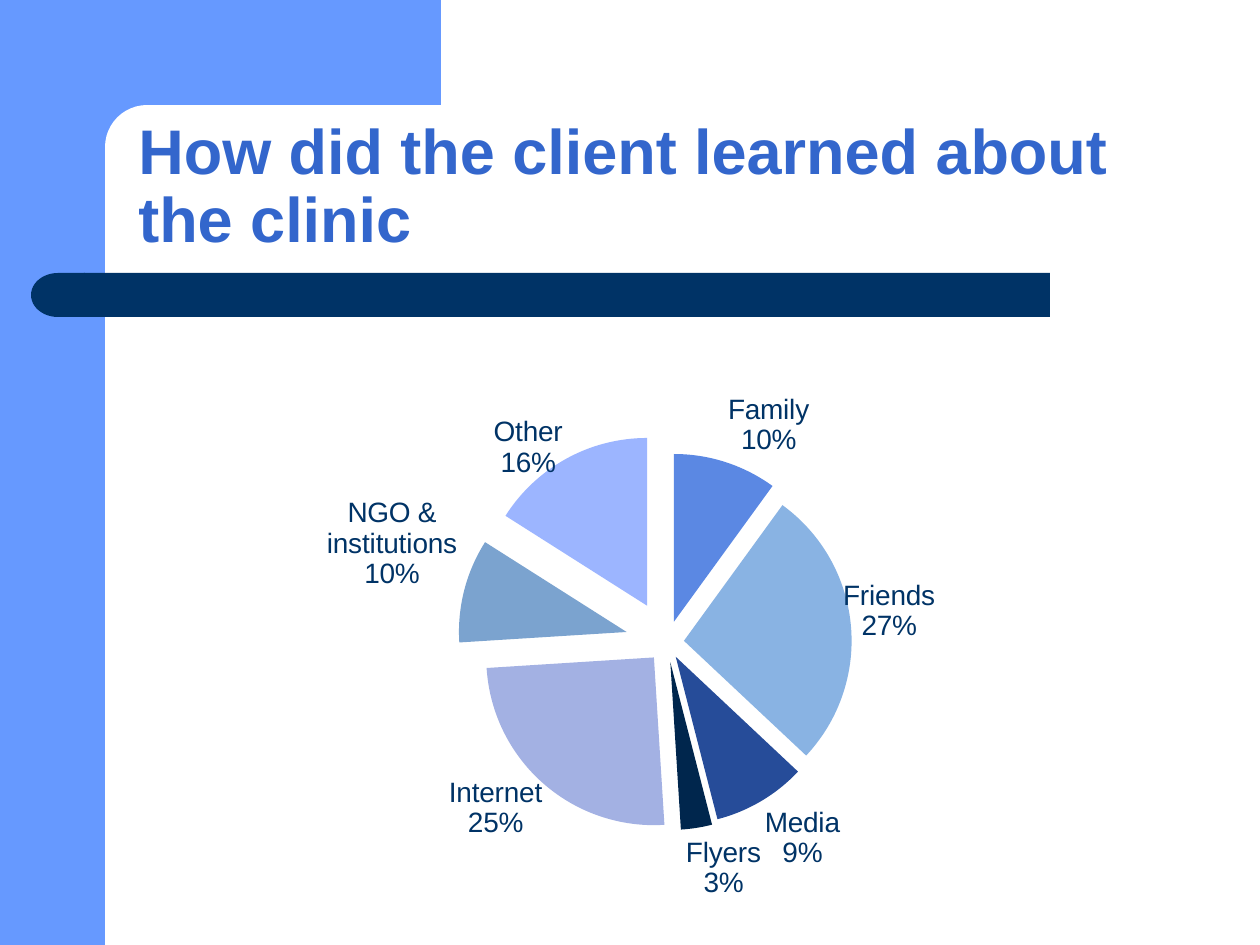
from lxml import etree
from pptx import Presentation
from pptx.chart.data import CategoryChartData
from pptx.dml.color import RGBColor
from pptx.enum.chart import XL_CHART_TYPE, XL_LABEL_POSITION
from pptx.enum.shapes import MSO_SHAPE
from pptx.enum.text import MSO_ANCHOR
from pptx.oxml import parse_xml
from pptx.oxml.ns import nsdecls, qn
from pptx.util import Pt

RECT, ROUND, DELAY = MSO_SHAPE.RECTANGLE, MSO_SHAPE.ROUNDED_RECTANGLE, MSO_SHAPE.FLOWCHART_DELAY
PIE, OUTSIDE, BOTTOM = XL_CHART_TYPE.PIE_EXPLODED, XL_LABEL_POSITION.OUTSIDE_END, MSO_ANCHOR.BOTTOM
EMU_PER_PX = 914400 // 126
SLIDE_SIZE = (1260, 945)
SKY, NAVY, WHITE = "6699FF", "003366", "FFFFFF"

TITLE = "How did the client learned about the clinic"
TITLE_BOX = (126, 105, 1103, 157)
TITLE_FORMAT = {"name": "Arial", "size": Pt(36), "bold": True}
LABEL_FORMAT = {"name": "Arial", "size": Pt(16)}

# shape, box, fill, rotation
BACKDROP = [
    (RECT, (0, 0, 105, 945), SKY, 0),
    (RECT, (95, 0, 346, 147), SKY, 0),
    (ROUND, (105, 105, 703, 84), WHITE, 0),
    (RECT, (84, 273, 966, 44), NAVY, 0),
    (DELAY, (31, 273, 54, 44), NAVY, 180),
]

CHART_BOX = (223, 363, 840, 559)
PLOT_BOX = (234, 70, 420, 420)
# answer, percent, fill, explosion, label shift
ANSWERS = [
    ("Family", 10, "5B88E3", 13, (0, 0)),
    ("Friends", 27, "89B3E3", 10, (-15, 16)),
    ("Media", 9, "264C99", 10, (0, 0)),
    ("Flyers", 3, "00264D", 12, (-12, 2)),
    ("Internet", 25, "A3B1E3", 12, (4, -12)),
    ("NGO & institutions", 10, "7BA3CF", 25, (0, 0)),
    ("Other", 16, "9CB5FF", 25, (0, 25)),
]


def px(*lengths):
    return [length * EMU_PER_PX for length in lengths]


def rgb(value):
    return RGBColor.from_string(value)


def style(font, formats, color):
    for key, value in formats.items():
        setattr(font, key, value)
    font.color.rgb = rgb(color)


def layout(**values):
    parts = "".join(f'<c:{key} val="{value}"/>' for key, value in values.items())
    return parse_xml(f'<c:layout {nsdecls("c")}><c:manualLayout>{parts}</c:manualLayout></c:layout>')


def add_backdrop(slide):
    for preset, box, fill, rotation in BACKDROP:
        part = slide.shapes.add_shape(preset, *px(*box))
        part.shadow.inherit = False
        part.fill.solid()
        part.fill.fore_color.rgb = rgb(fill)
        part.line.fill.background()
        part.rotation = rotation
        if preset == ROUND:
            part.adjustments[0] = 0.5


def add_title(slide):
    frame = slide.shapes.add_textbox(*px(*TITLE_BOX)).text_frame
    frame.word_wrap = True
    frame.vertical_anchor = BOTTOM
    paragraph = frame.paragraphs[0]
    paragraph.line_spacing = 0.9
    heading = paragraph.add_run()
    heading.text = TITLE
    style(heading.font, TITLE_FORMAT, "3366CC")


def add_pie(slide):
    data = CategoryChartData()
    data.categories = [answer[0] for answer in ANSWERS]
    data.add_series("Series 1", [answer[1] for answer in ANSWERS])
    chart = slide.shapes.add_chart(PIE, *px(*CHART_BOX), data).chart
    chart.has_legend = chart.has_title = False
    style(chart.font, LABEL_FORMAT, NAVY)
    plot = chart.plots[0]
    plot.vary_by_categories = True

    width, height = CHART_BOX[2:]
    left, top, plot_width, plot_height = PLOT_BOX
    plot_area = chart.element.find(".//" + qn("c:plotArea"))
    for old in plot_area.findall(qn("c:layout")):
        plot_area.remove(old)
    plot_area.insert(0, layout(
        layoutTarget="inner", xMode="edge", yMode="edge",
        x=round(left / width, 3), y=round(top / height, 3),
        w=round(plot_width / width, 2), h=round(plot_height / height, 2)))

    series = plot.series[0]
    labels = series.data_labels
    label_formats = {"show_category_name": True, "show_percentage": True,
                     "show_value": False, "show_legend_key": False, "position": OUTSIDE}
    for key, value in label_formats.items():
        setattr(labels, key, value)
    style(labels.font, LABEL_FORMAT, NAVY)
    separator = etree.Element(qn("c:separator"))
    separator.text = "\n"
    labels._element.find(qn("c:showBubbleSize")).addnext(separator)
    for leader in labels._element.findall(qn("c:showLeaderLines")):
        labels._element.remove(leader)
    separator.addnext(etree.Element(qn("c:showLeaderLines"), val="0"))

    shown = {"showVal": "0", "showCatName": "1", "showSerName": "0", "showPercent": "1"}
    for index, (_, _, fill, explosion, (right, down)) in enumerate(ANSWERS):
        point = series.points[index]
        point.format.fill.solid()
        point.format.fill.fore_color.rgb = rgb(fill)
        point.format.line.fill.background()
        slice_xml = point.format.fill._xPr.getparent()
        offset = etree.Element(qn("c:explosion"), val=str(explosion))
        slice_xml.find(qn("c:spPr")).addprevious(offset)

        if not (right or down):
            continue
        point.data_label.position = OUTSIDE
        label = labels._element.findall(qn("c:dLbl"))[-1]
        for tag, value in shown.items():
            label.find(qn("c:" + tag)).set("val", value)
        label.append(etree.fromstring(etree.tostring(separator)))
        label.find(qn("c:idx")).addnext(
            layout(x=round(right / width, 3), y=round(down / height, 3)))


def main():
    deck = Presentation()
    deck.slide_width, deck.slide_height = px(*SLIDE_SIZE)
    slide = deck.slides.add_slide(deck.slide_layouts[6])
    add_backdrop(slide)
    add_title(slide)
    add_pie(slide)
    deck.save("out.pptx")


if __name__ == "__main__":
    main()
